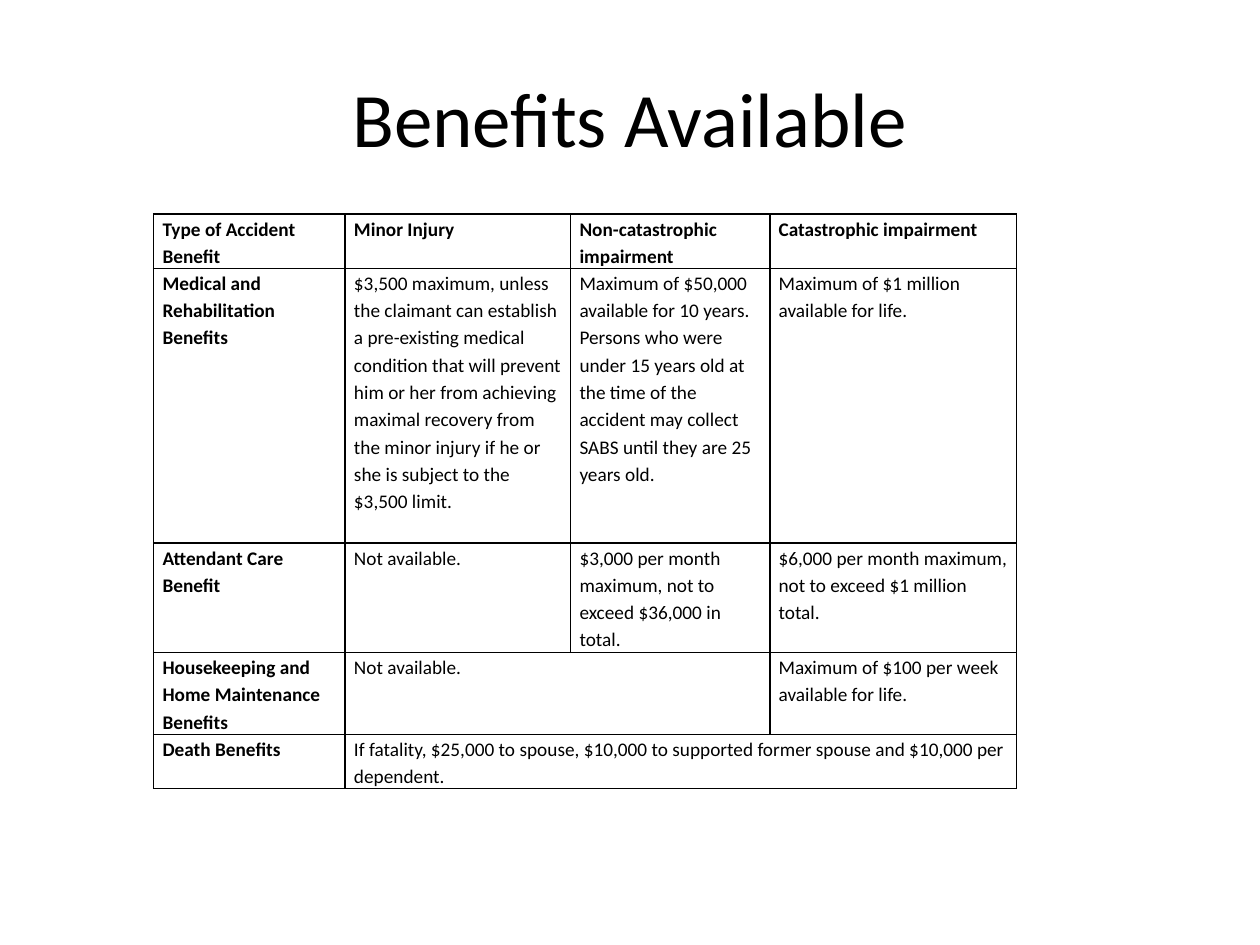
from lxml import etree
from pptx import Presentation
from pptx.dml.color import RGBColor
from pptx.enum.text import MSO_ANCHOR, PP_ALIGN
from pptx.oxml.ns import qn
from pptx.util import Inches, Pt

LEFT, CENTER = PP_ALIGN.LEFT, PP_ALIGN.CENTER
TOP, MIDDLE = MSO_ANCHOR.TOP, MSO_ANCHOR.MIDDLE
COLORS = {"text": "000000", "border": "000000", "paper": "FFFFFF"}
FONT = "Calibri"
PAGE_WIDTH, PAGE_HEIGHT = Inches(10), Inches(7.5)

COLUMN_WIDTHS = [1.52, 1.79, 1.58, 1.96]
ROW_HEIGHTS = [0.43, 2.18, 0.87, 0.65, 0.43]
# Each entry is the text and the number of columns it spans.
BENEFITS = [
    [("Type of Accident Benefit", 1), ("Minor Injury", 1),
     ("Non-catastrophic impairment", 1), ("Catastrophic impairment", 1)],
    [("Medical and Rehabilitation Benefits", 1),
     ("$3,500 maximum, unless the claimant can establish a pre-existing medical "
      "condition that will prevent him or her from achieving maximal recovery from "
      "the minor injury if he or she is subject to the $3,500 limit.", 1),
     ("Maximum of $50,000 available for 10 years. Persons who were under 15 years old "
      "at the time of the accident may collect SABS until they are 25 years old.", 1),
     ("Maximum of $1 million available for life.", 1)],
    [("Attendant Care Benefit", 1), ("Not available.", 1),
     ("$3,000 per month maximum, not to exceed $36,000 in total.", 1),
     ("$6,000 per month maximum, not to exceed $1 million total.", 1)],
    [("Housekeeping and Home Maintenance Benefits", 1), ("Not available.", 2),
     ("Maximum of $100 per week available for life.", 1)],
    [("Death Benefits", 1),
     ("If fatality, $25,000 to spouse, $10,000 to supported former spouse and "
      "$10,000 per dependent.", 3)],
]


def write_text(frame, text, size, bold=False, align=LEFT, spacing=1.0):
    frame.word_wrap = True
    para = frame.paragraphs[0]
    para.alignment = align
    para.line_spacing = spacing
    span = para.add_run()
    span.text = text
    span.font.name = FONT
    span.font.size = Pt(size)
    span.font.bold = bold
    span.font.color.rgb = RGBColor.from_string(COLORS["text"])


def style_cell(cell):
    """Give the cell a thin border on every side, a plain fill and tight margins."""
    properties = cell._tc.get_or_add_tcPr()
    for side in ("lnL", "lnR", "lnT", "lnB"):
        line = etree.SubElement(properties, qn(f"a:{side}"), w=str(Pt(1)))
        fill = etree.SubElement(line, qn("a:solidFill"))
        etree.SubElement(fill, qn("a:srgbClr"), val=COLORS["border"])
    cell.fill.solid()
    cell.fill.fore_color.rgb = RGBColor.from_string(COLORS["paper"])
    cell.margin_left = cell.margin_right = Inches(0.07)
    cell.margin_top = cell.margin_bottom = 0
    cell.vertical_anchor = TOP


def add_title(page, left, top, width, height):
    box = page.shapes.add_textbox(left, top, width, height)
    box.text_frame.vertical_anchor = MIDDLE
    write_text(box.text_frame, "Benefits Available", size=44, align=CENTER)


def add_benefits_table(page, left, top, width, height):
    frame = page.shapes.add_table(len(ROW_HEIGHTS), len(COLUMN_WIDTHS),
                                  left, top, width, height)
    table = frame.table
    table.first_row = table.horz_banding = False
    for column, share in zip(table.columns, COLUMN_WIDTHS):
        column.width = int(width * share / sum(COLUMN_WIDTHS))
    for row, share in zip(table.rows, ROW_HEIGHTS):
        row.height = int(height * share / sum(ROW_HEIGHTS))
    for cell in table.iter_cells():
        style_cell(cell)
    for row_index, entries in enumerate(BENEFITS):
        column_index = 0
        for text, columns in entries:
            cell = table.cell(row_index, column_index)
            if columns > 1:
                cell.merge(table.cell(row_index, column_index + columns - 1))
            heading = row_index == 0 or column_index == 0
            write_text(cell.text_frame, text, size=11, bold=heading, spacing=1.15)
            column_index += columns


def main():
    deck = Presentation()
    deck.slide_width, deck.slide_height = PAGE_WIDTH, PAGE_HEIGHT
    page = deck.slides.add_slide(deck.slide_layouts[6])
    add_title(page, int(PAGE_WIDTH * 0.05), int(PAGE_HEIGHT * 0.04),
              int(PAGE_WIDTH * 0.9), int(PAGE_HEIGHT / 6))
    add_benefits_table(page, Inches(1.22), Inches(1.7),
                       Inches(sum(COLUMN_WIDTHS)), Inches(sum(ROW_HEIGHTS)))
    deck.save("out.pptx")


if __name__ == "__main__":
    main()
